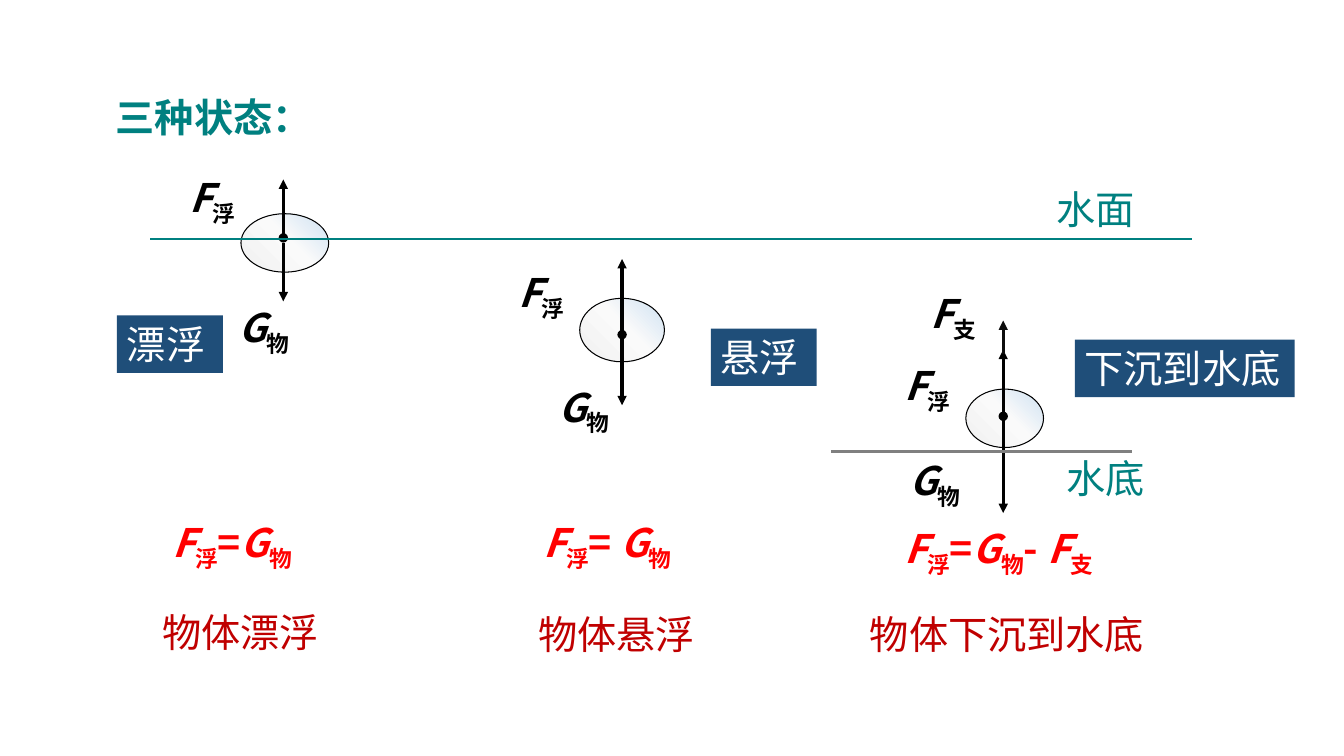
from itertools import groupby

from lxml import etree
from pptx import Presentation
from pptx import util as u
from pptx.dml.color import RGBColor
from pptx.enum import shapes, text
from pptx.oxml import parse_xml
from pptx.oxml.ns import nsdecls, qn

INK = {
    "teal": "008080", "red": "FF0000", "wine": "C00000", "navy": "1F4E79",
    "black": "000000", "coal": "0D0D0D", "gray": "808080", "white": "FFFFFF",
    "pale": "F1F0F0", "mist": "FAFAFA", "sky": "CEE1F2",
}
FACE = "Noto Sans CJK SC"
SIZE = 28
ROW = 57


def px(n):
    return u.Emu(n * 9144)


def rgb(name):
    return RGBColor.from_string(INK[name])


def kind(char):
    if char in "FG":
        return "force"
    return "sub" if char in "浮物支" else "sign"


class Board:
    def __init__(self, deck):
        self.slide = deck.slides.add_slide(deck.slide_layouts[6])
        self.items = self.slide.shapes

    def style(self, frame, ink, bold):
        frame.word_wrap = True
        frame.vertical_anchor = text.MSO_ANCHOR.TOP
        para = frame.paragraphs[0]
        para.alignment = text.PP_ALIGN.LEFT
        font = para.font
        font.size, font.name, font.bold = u.Pt(SIZE), FACE, bold
        font.color.rgb = rgb(ink)
        props = para._p.pPr.find(qn("a:defRPr"))
        etree.SubElement(props, qn("a:ea")).set("typeface", FACE)
        return para

    def note(self, x, y, w, words, ink, bold=False):
        box = self.items.add_textbox(px(x), px(y), px(w), px(ROW))
        para = self.style(box.text_frame, ink, bold)
        para.add_run().text = words

    def force(self, x, y, w, words, ink="black"):
        box = self.items.add_textbox(px(x), px(y), px(w), px(ROW))
        para = self.style(box.text_frame, ink, True)
        for sort, chars in groupby(words, kind):
            run = para.add_run()
            run.text = "".join(chars)
            if sort == "force":
                run.font.italic = True
            elif sort == "sub":
                run._r.get_or_add_rPr().set("baseline", "-25000")

    def tag(self, x, y, w, words):
        box = self.items.add_shape(
            shapes.MSO_SHAPE.RECTANGLE, px(x), px(y), px(w), px(ROW))
        box.shadow.inherit = False
        box.fill.solid()
        box.fill.fore_color.rgb = rgb("navy")
        box.line.fill.background()
        para = self.style(box.text_frame, "white", False)
        para.add_run().text = words

    def ball(self, x, y, w, h):
        oval = self.items.add_shape(
            shapes.MSO_SHAPE.OVAL, px(x), px(y), px(w), px(h))
        oval.shadow.inherit = False
        oval.line.color.rgb = rgb("black")
        oval.line.width = u.Pt(0.75)
        oval.fill.background()
        stops = "".join(
            f'<a:gs pos="{pos}000"><a:srgbClr val="{INK[ink]}"/></a:gs>'
            for pos, ink in ((0, "pale"), (55, "mist"), (100, "sky")))
        blend = parse_xml(
            f'<a:gradFill {nsdecls("a")} rotWithShape="1">'
            f'<a:gsLst>{stops}</a:gsLst><a:path path="circle">'
            '<a:fillToRect t="100000" r="100000"/></a:path></a:gradFill>')
        props = oval._element.spPr
        props.replace(props.find(qn("a:noFill")), blend)

    def line(self, x1, y1, x2, y2, ink="black", width=2.25, head=None, tail=None):
        bar = self.items.add_connector(
            shapes.MSO_CONNECTOR.STRAIGHT, px(x1), px(y1), px(x2), px(y2))
        bar.line.color.rgb = rgb(ink)
        bar.line.width = u.Pt(width)
        props = bar._element.spPr
        edge = props.find(qn("a:ln"))
        for end, shape in (("a:headEnd", head), ("a:tailEnd", tail)):
            if shape:
                etree.SubElement(edge, qn(end)).set("type", shape)
        etree.SubElement(props, qn("a:effectLst"))

    def arrow(self, x, start, end, ink="black", head=None):
        self.line(x, start, x, end, ink, head=head, tail="triangle")


def main():
    deck = Presentation()
    deck.slide_width, deck.slide_height = u.Inches(13.33), u.Inches(7.5)
    board = Board(deck)

    board.note(105, 88, 217, "三种状态：", "teal", True)

    for ball in ((239, 212, 87, 58), (575, 296, 84, 63), (958, 386, 77, 58)):
        board.ball(*ball)

    for x, mid, top, low, base in (
            (281, 236, 178, 241, 299),
            (617, 332, 257, 336, 402),
            (995, 413, 347, 410, 509)):
        board.arrow(x, mid, top, head="oval")
        board.arrow(x, low, base)
    board.arrow(995, 351, 318, "coal")

    board.line(149, 237, 1182, 237, "teal", 1.5)
    board.line(824, 448, 1123, 448, "gray")
    board.note(1038, 179, 189, "水面", "teal")
    board.note(1048, 446, 107, "水底", "teal")

    for x, y, w, words in (
            (178, 167, 122, "F浮"), (227, 296, 107, "G物"),
            (504, 261, 122, "F浮"), (544, 375, 95, "G物"),
            (913, 282, 100, "F支"), (887, 354, 100, "F浮"),
            (892, 448, 126, "G物")):
        board.force(x, y, w, words)

    for x, y, w, words in (
            (116, 313, 105, "漂浮"), (705, 326, 105, "悬浮"),
            (1066, 337, 218, "下沉到水底")):
        board.tag(x, y, w, words)

    for x, y, w, words in (
            (161, 509, 191, "F浮=G物"), (529, 509, 222, "F浮= G物"),
            (887, 515, 268, "F浮=G物- F支")):
        board.force(x, y, w, words, "red")

    for x, y, w, words in (
            (151, 599, 247, "物体漂浮"), (524, 601, 241, "物体悬浮"),
            (853, 601, 371, "物体下沉到水底")):
        board.note(x, y, w, words, "wine")

    deck.save("out.pptx")


if __name__ == "__main__":
    main()
